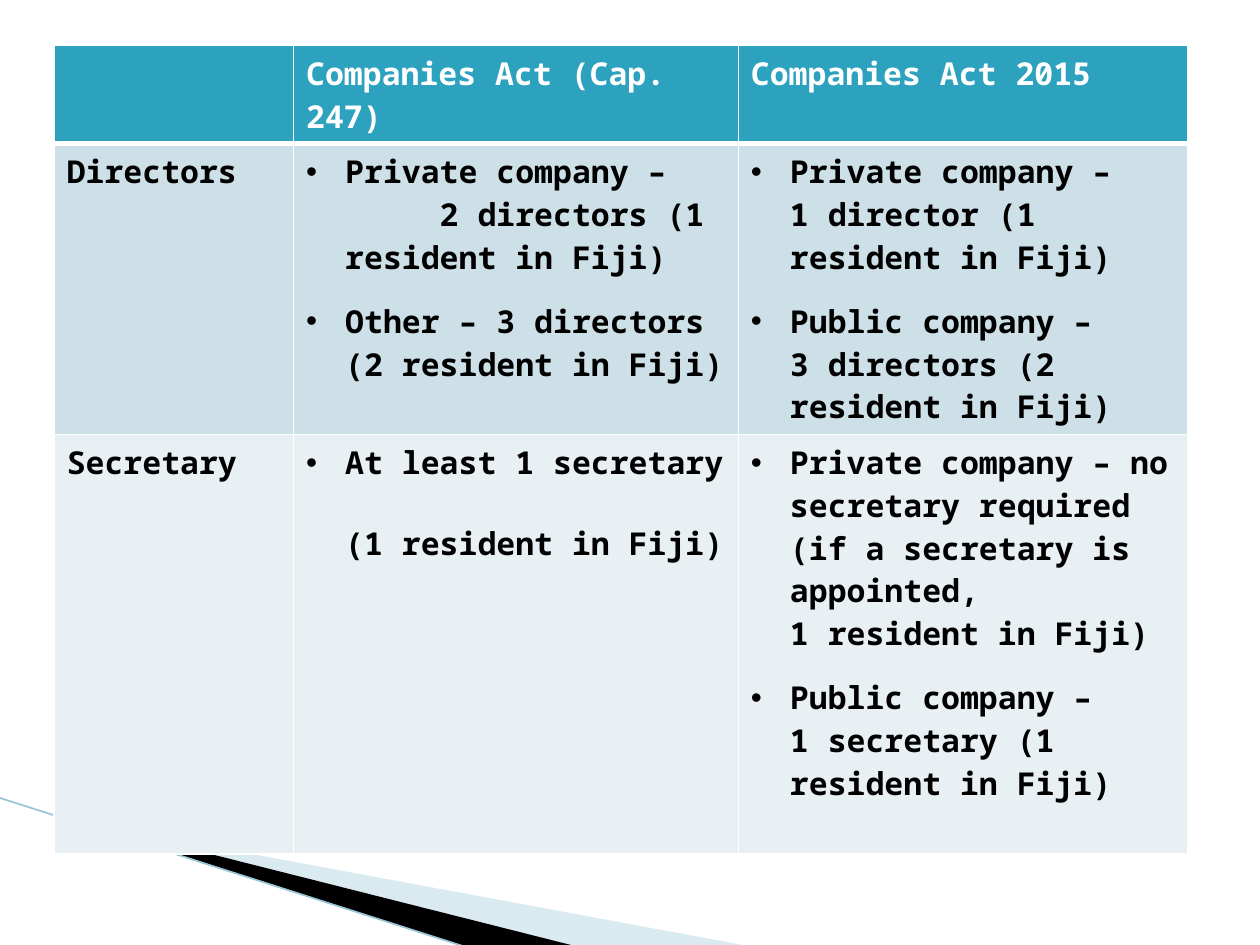
import pptx
import pptx.util
import pptx.dml.color
import pptx.oxml
import pptx.oxml.ns
from lxml import etree

RGB = pptx.dml.color.RGBColor
Pt = pptx.util.Pt
qn = pptx.oxml.ns.qn

WHITE = RGB(0xFF, 0xFF, 0xFF)
BLACK = RGB(0, 0, 0)
TEAL = RGB(0x2D, 0xA2, 0xBF)
PALE = RGB(0xCD, 0xE0, 0xE8)
LIGHT = RGB(0xE8, 0xF0, 0xF4)
SKY = RGB(0xA0, 0xCB, 0xDC)
EDGE = RGB(0x97, 0xC5, 0xD8)
FONT = "Noto Sans Mono"

deck = pptx.Presentation()
deck.slide_width = pptx.util.Inches(10)
deck.slide_height = pptx.util.Inches(7.5)
slide = deck.slides.add_slide(deck.slide_layouts[6])
UNIT = deck.slide_width / 100  # the slide is a grid of 100 columns and 75 rows


def grid(*steps):
    return [round(step * UNIT) for step in steps]


def rule(cell, side, width):
    """Draw one white border of a cell; borders must come before the fill."""
    props = cell._tc.get_or_add_tcPr()
    line = etree.Element(qn("a:" + side), w=str(Pt(width)))
    fill = etree.SubElement(line, qn("a:solidFill"))
    etree.SubElement(fill, qn("a:srgbClr"), val=str(WHITE))
    props.insert(len(props) - 1, line)


# Swoosh in the lower left corner
wedges = [
    (SKY, 40, [(5.5, 65.1), (59.5, 75.1), (45.6, 75.1), (5.5, 65)]),
    (BLACK, 100, [(5.3, 64.9), (45.7, 75.1), (37.2, 75.2), (5.4, 65)]),
]
for color, share, points in wedges:
    start, *rest = [grid(*point) for point in points]
    pen = slide.shapes.build_freeform(*start)
    pen.add_line_segments(rest)
    wedge = pen.convert_to_shape()
    wedge.shadow.inherit = False
    wedge.line.fill.background()
    wedge.fill.solid()
    wedge.fill.fore_color.rgb = color
    if share < 100:
        tint = wedge._element.spPr.find(".//" + qn("a:srgbClr"))
        etree.SubElement(tint, qn("a:alpha"), val=str(share * 1000))

edge = slide.shapes.add_connector(1, *grid(-0.1, 63.3, 37.1, 75.2))
edge.line.color.rgb = EDGE
edge.line.width = Pt(0.95)
etree.SubElement(edge._element.spPr, qn("a:effectLst"))

# Comparison table; "•" opens a bullet, ">" a line set further in
rows = [
    (7.8, TEAL, WHITE, [[], ["Companies Act (Cap. 247)"], ["Companies Act 2015"]]),
    (23, PALE, BLACK, [
        ["Directors"],
        ["•Private company –", ">2 directors (1 resident in Fiji)",
         "•Other – 3 directors \v(2 resident in Fiji)"],
        ["•Private company – \v1 director (1 resident in Fiji)",
         "•Public company – \v3 directors (2 resident in Fiji)"]]),
    (33.3, LIGHT, BLACK, [
        ["Secretary"],
        ["•At least 1 secretary \v(1 resident in Fiji)"],
        ["•Private company – no secretary required "
         "(if a secretary is appointed, \v1 resident in Fiji)",
         "•Public company – \v1 secretary (1 resident in Fiji)"]]),
]
cols = [19, 35.3, 35.7]
high = sum(row[0] for row in rows)
table = slide.shapes.add_table(
    len(rows), len(cols), *grid(4.3, 3.6, sum(cols), high)).table
for col, width in zip(table.columns, grid(*cols)):
    col.width = width

hang, deep = grid(3.1, 7.5)
for r, (height, shade, ink, texts) in enumerate(rows):
    table.rows[r].height = grid(height)[0]
    for c, lines in enumerate(texts):
        cell = table.cell(r, c)
        cell.fill.solid()
        cell.fill.fore_color.rgb = shade
        for side in ("lnL", "lnR", "lnT", "lnB"):
            thick = (r, side) in ((0, "lnB"), (1, "lnT"))
            rule(cell, side, 3 if thick else 1)
        frame = cell.text_frame
        for i, line in enumerate(lines):
            para = frame.add_paragraph() if i else frame.paragraphs[0]
            para.text = line.lstrip("•>")
            if line[0] in "•>":
                props = para._p.get_or_add_pPr()
                props.set("marL", str(hang))
                props.set("indent", str(-hang if line[0] == "•" else deep))
                if line[0] == "•":
                    etree.SubElement(props, qn("a:buFont"), typeface="Arial")
                    etree.SubElement(props, qn("a:buChar"), char="•")
                    if i:
                        para.space_before = Pt(12)
            for run in para.runs:
                run.font.name = FONT
                run.font.size = Pt(18)
                run.font.bold = True
                run.font.color.rgb = ink

deck.save("out.pptx")
